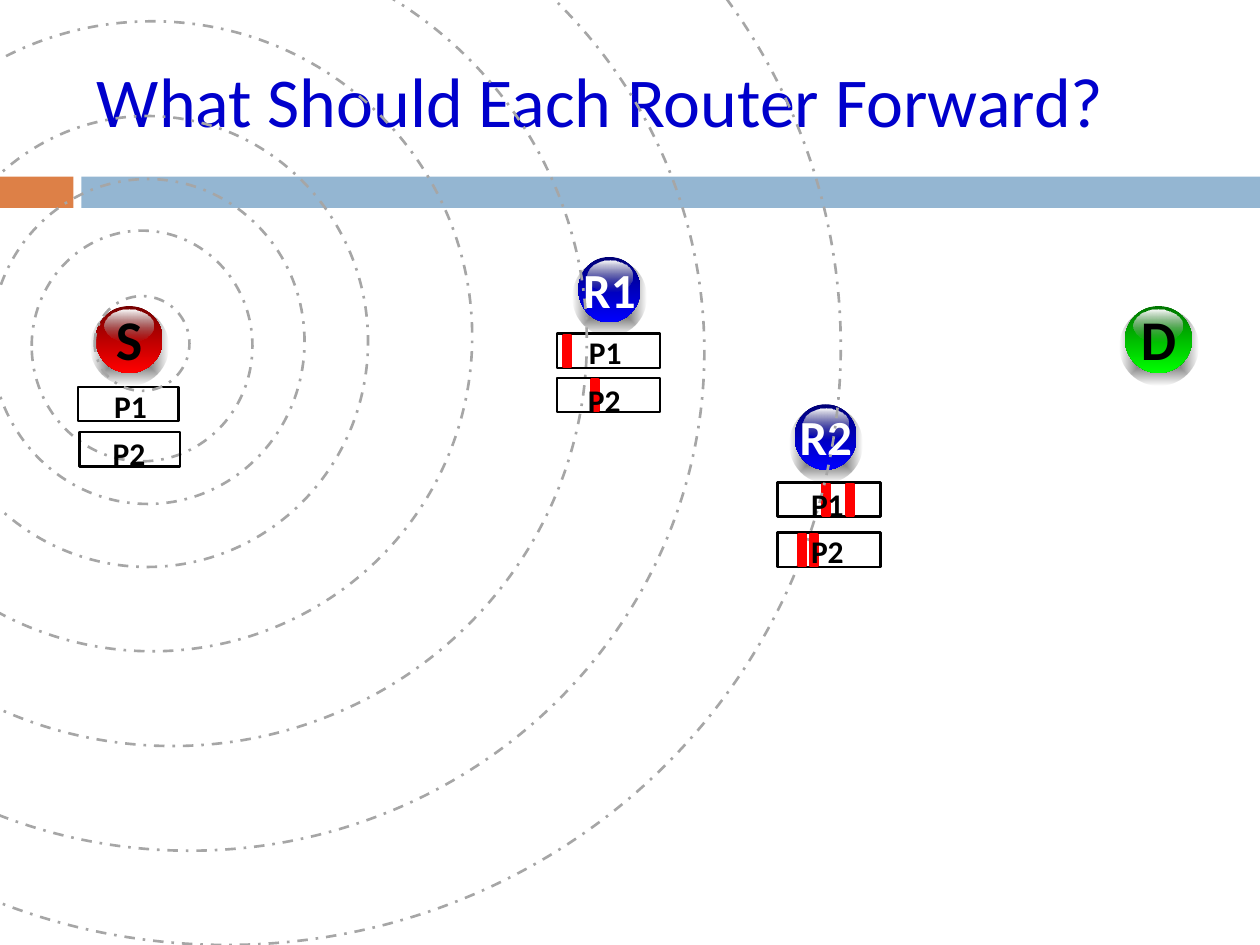
import dataclasses

import pptx
import pptx.dml.color
import pptx.enum.dml
import pptx.enum.shapes
import pptx.enum.text
import pptx.oxml
import pptx.util

Cm = pptx.util.Cm
Pt = pptx.util.Pt
KIND = pptx.enum.shapes.MSO_SHAPE
ALIGN = pptx.enum.text.PP_ALIGN
ANCHOR = pptx.enum.text.MSO_ANCHOR
NS = "http://schemas.openxmlformats.org/drawingml/2006/main"


@dataclasses.dataclass(frozen=True)
class Theme:
    """Colours and type sizes of the slide."""
    font: str = "Calibri"
    title: str = "0000CC"
    accent: str = "DD8047"
    band: str = "94B6D2"
    ink: str = "000000"
    white: str = "FFFFFF"
    mark: str = "FF0000"
    ring: str = "A6A6A6"
    gloss: str = "767676"
    red: tuple = ("760000", "FF0000")
    green: tuple = ("007600", "00FF00")
    blue: tuple = ("000076", "0000FF")
    head: int = 40
    end: int = 32
    router: int = 28
    packet: int = 18
    line: float = 1.5


THEME = Theme()

NODES = [
    ("R1", 11.66, 5.18, 1.25, 1.32, 1.57, THEME.blue, THEME.white, THEME.router),
    ("D", 22.68, 6.17, 1.35, 1.35, 1.22, THEME.green, THEME.ink, THEME.end),
    ("R2", 16.02, 8.15, 1.25, 1.32, 1.57, THEME.blue, THEME.white, THEME.router),
    ("S", 1.93, 6.17, 1.35, 1.35, 1.04, THEME.red, THEME.ink, THEME.end),
]
PACKETS = {
    "P1": [
        (1.57, 7.8, 2.03, [], 2.63, 8.13),
        (11.23, 6.73, 2.08, [0.13], 12.2, 7.04),
        (15.67, 9.73, 2.08, [0.91, 1.4], 16.68, 10.11),
    ],
    "P2": [
        (1.6, 8.71, 2.03, [], 2.6, 9.07),
        (11.23, 7.62, 2.08, [0.69], 12.18, 8),
        (15.67, 10.74, 2.08, [0.43, 0.66], 16.68, 11.05),
    ],
}
RINGS = [
    (1.91, 5.97, 1.91, 1.91),
    (-0.18, 3.61, 6.32, 6.55),
    (0.64, 4.65, 4.45, 4.65),
    (-1.47, 2.34, 8.89, 9.09),
    (-3.38, 0.43, 12.9, 12.7),
    (-4.88, -1.27, 16.71, 16.31),
    (-6.55, -2.97, 20.75, 20.12),
    (-7.82, -5.08, 24.77, 24.13),
]


def rgb(code):
    """Turn a hex code into a colour."""
    return pptx.dml.color.RGBColor.from_string(code)


def draw(shapes, kind, box, fill=None, line=None):
    """Add a preset shape with a plain fill and line."""
    shape = shapes.add_shape(kind, *map(Cm, box))
    shape.shadow.inherit = False
    if fill:
        shape.fill.solid()
        shape.fill.fore_color.rgb = rgb(fill)
    else:
        shape.fill.background()
    if line:
        shape.line.color.rgb = rgb(line)
        shape.line.width = Pt(THEME.line)
    else:
        shape.line.fill.background()
    return shape


def shade(shape, first, last, alpha=100, round=False):
    """Fill a shape with a two-stop gradient."""
    way = ('<a:path path="shape"><a:fillToRect l="50000" t="50000" r="50000" b="50000"/></a:path>'
           if round else '<a:lin ang="5400000" scaled="0"/>')
    grad = pptx.oxml.parse_xml(
        f'<a:gradFill xmlns:a="{NS}" rotWithShape="1"><a:gsLst>'
        f'<a:gs pos="0"><a:srgbClr val="{first}"/></a:gs>'
        f'<a:gs pos="100000"><a:srgbClr val="{last}"><a:alpha val="{alpha * 1000}"/></a:srgbClr></a:gs>'
        f'</a:gsLst>{way}</a:gradFill>')
    props = shape.element.spPr
    props.replace(props.find(f"{{{NS}}}noFill"), grad)


def style(para, size, color, bold=False):
    """Format the runs of a paragraph."""
    for run in para.runs:
        run.font.name = THEME.font
        run.font.size = Pt(size)
        run.font.bold = bold
        run.font.color.rgb = rgb(color)


def label(shapes, text, x, y, width, size, color):
    """Add a bold label centred on a point."""
    high = size * 0.05
    box = shapes.add_textbox(Cm(x - width / 2), Cm(y - high / 2), Cm(width), Cm(high))
    frame = box.text_frame
    frame.word_wrap = False
    frame.auto_size = pptx.enum.text.MSO_AUTO_SIZE.SHAPE_TO_FIT_TEXT
    frame.text = text
    frame.paragraphs[0].alignment = ALIGN.CENTER
    style(frame.paragraphs[0], size, color, True)


def node(slide, name, x, y, w, h, width, tones, color, size):
    """Add a glossy ball with its name."""
    shapes = slide.shapes.add_group_shape().shapes
    base = draw(shapes, KIND.OVAL, (x - 0.11, y + 0.03, w + 0.23, h + 0.23))
    shade(base, THEME.ink, THEME.ink, 0, True)
    shade(draw(shapes, KIND.OVAL, (x, y, w, h)), *tones)
    shine = draw(shapes, KIND.OVAL, (x + 0.18, y + 0.08, w * 0.73, h * 0.47))
    shade(shine, THEME.white, THEME.gloss, 0)
    label(shapes, name, x + w / 2, y + h / 2 - 0.03, width, size, color)


def packet(slide, x, y, width, marks):
    """Add a packet frame with its damaged parts."""
    shapes = slide.shapes.add_group_shape().shapes
    draw(shapes, KIND.RECTANGLE, (x, y, width, 0.69), line=THEME.ink)
    for mark in marks:
        draw(shapes, KIND.RECTANGLE, (x + mark, y + 0.03, 0.15, 0.64), THEME.mark, THEME.mark)


def ring(slide, box):
    """Add one dashed radio wave."""
    wave = draw(slide.shapes, KIND.OVAL, box, line=THEME.ring)
    wave.line.dash_style = pptx.enum.dml.MSO_LINE.DASH_DOT


def heading(slide, text):
    """Place the title and the band below it."""
    title = slide.shapes.title
    title.left, title.top, title.width, title.height = map(Cm, (1.7, 0.64, 22.66, 2.74))
    frame = title.text_frame
    frame.text = text
    frame.vertical_anchor = ANCHOR.MIDDLE
    frame.paragraphs[0].alignment = ALIGN.LEFT
    style(frame.paragraphs[0], THEME.head, THEME.title)
    draw(slide.shapes, KIND.RECTANGLE, (0, 3.56, 1.48, 0.63), THEME.accent)
    draw(slide.shapes, KIND.RECTANGLE, (1.64, 3.56, 23.76, 0.63), THEME.band)


def main():
    """Build and save the slide."""
    deck = pptx.Presentation()
    deck.slide_width, deck.slide_height = Cm(25.4), Cm(19.05)
    slide = deck.slides.add_slide(deck.slide_layouts[5])
    heading(slide, "What Should Each Router Forward?")
    for item in NODES:
        node(slide, *item)
    for item in PACKETS["P1"]:
        packet(slide, *item[:4])
    for box in RINGS:
        ring(slide, box)
    for item in PACKETS["P2"]:
        packet(slide, *item[:4])
    for name, row in PACKETS.items():
        for item in row:
            label(slide.shapes, name, *item[4:], 1.19, THEME.packet, THEME.ink)
    deck.save("out.pptx")


if __name__ == "__main__":
    main()
